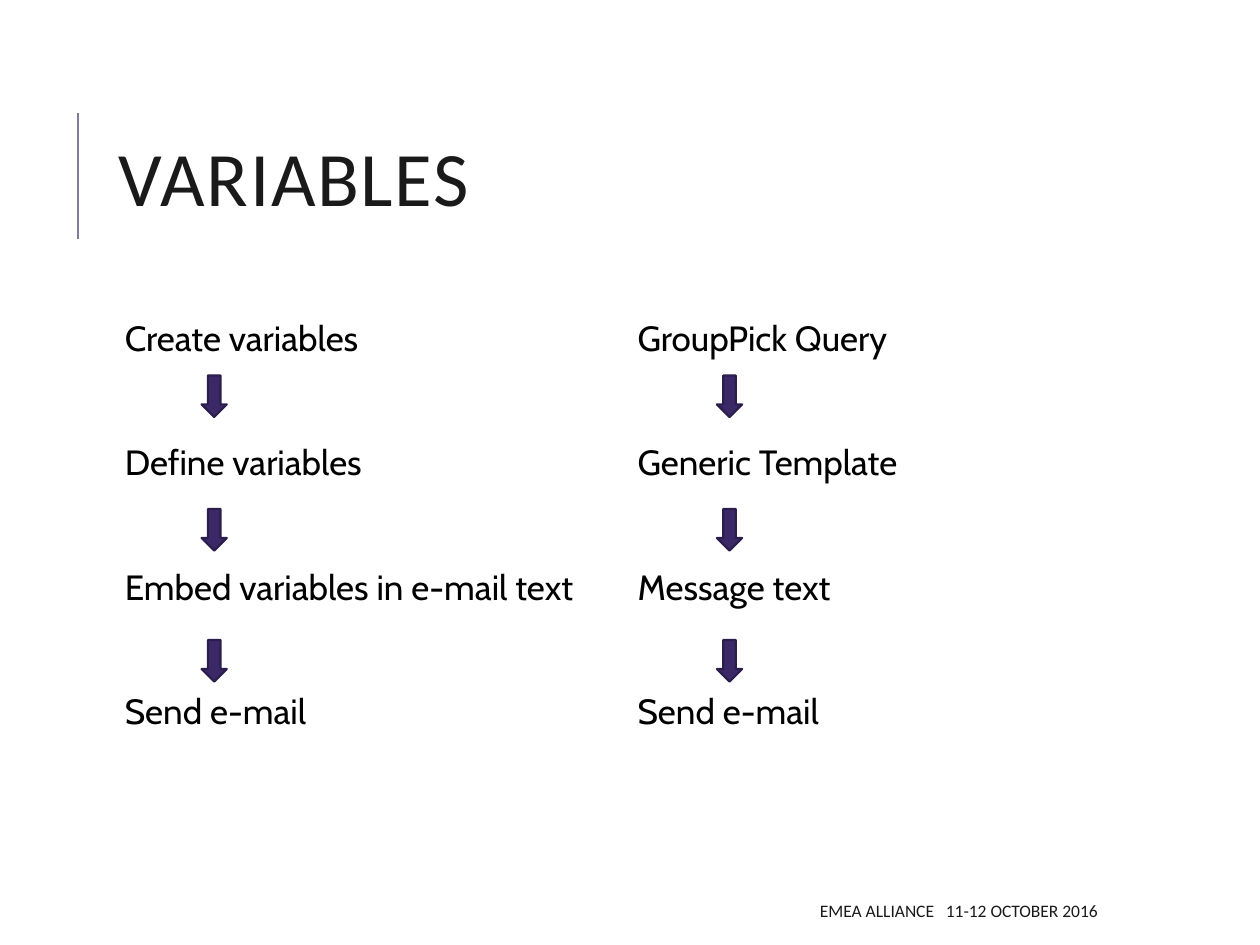
"""Build the slide that sets two step-by-step flows side by side."""
from dataclasses import dataclass

from lxml import etree
from pptx import Presentation
from pptx.dml.color import RGBColor
from pptx.enum import shapes, text
from pptx.oxml import ns
from pptx.util import Inches, Pt

INK, BLACK, RULE = "1A1A1A", "000000", "7F7B99"
ARROW_FILL, ARROW_LINE = "3B2867", "2C1E4C"
ARROW_TOPS = (2.98, 4.04, 5.08)


@dataclass
class Flow:
    left: float
    arrow_left: float
    steps: tuple[str, ...]


FLOWS = (
    Flow(0.84, 1.6, ("Create variables", "Define variables",
                     "Embed variables in e-mail text", "Send e-mail")),
    Flow(4.91, 5.69, ("GroupPick Query", "Generic Template",
                      "Message text", "Send e-mail")),
)


def colour(value: str) -> RGBColor:
    return RGBColor.from_string(value)


def place(box, left: float, top: float, width: float, height: float) -> None:
    box.left, box.top = Inches(left), Inches(top)
    box.width, box.height = Inches(width), Inches(height)


def write(para, words: str, *, size: float, font: str, ink: str,
          align=text.PP_ALIGN.LEFT, tracking: int = 0) -> None:
    para.alignment = align
    span = para.add_run()
    span.text = words
    span.font.size, span.font.name = Pt(size), font
    span.font.color.rgb = colour(ink)
    if tracking:
        span.font._element.set("spc", str(tracking))


def prepare(box, anchor, inset: float | None = None):
    frame = box.text_frame
    frame.word_wrap = True
    frame.auto_size = text.MSO_AUTO_SIZE.NONE
    frame.vertical_anchor = anchor
    if inset is not None:
        frame.margin_left = frame.margin_right = Inches(inset)
        frame.margin_top = frame.margin_bottom = Inches(inset)
    return frame


def draw_title(box) -> None:
    place(box, 0.84, 0.64, 7.97, 1.64)
    para = prepare(box, text.MSO_ANCHOR.MIDDLE).paragraphs[0]
    para.line_spacing = 0.8
    write(para, "VARIABLES", size=44, font="Calibri", ink=INK, tracking=100)


def draw_rule(page) -> None:
    rule = page.shapes.add_connector(
        shapes.MSO_CONNECTOR.STRAIGHT,
        Inches(0.62), Inches(1.9), Inches(0.62), Inches(0.9))
    rule.line.color.rgb = colour(RULE)
    rule.line.width = Pt(1.5)
    etree.SubElement(rule._element.spPr, ns.qn("a:effectLst"))


def draw_steps(box, flow: Flow) -> None:
    place(box, flow.left, 2.5, 3.9, 4.4)
    frame = prepare(box, text.MSO_ANCHOR.TOP, inset=0.05)
    for index, step in enumerate(flow.steps):
        para = frame.add_paragraph() if index else frame.paragraphs[0]
        para.line_spacing = 0.9
        para.space_before, para.space_after = Pt(12), Pt(37.5)
        write(para, step, size=20, font="Cabin", ink=BLACK)
        layout = para._p.get_or_add_pPr()
        layout.set("marL", str(Inches(0.1)))
        layout.set("indent", "0")
        etree.SubElement(layout, ns.qn("a:buNone"))


def draw_arrow(page, left: float, top: float) -> None:
    arrow = page.shapes.add_shape(
        shapes.MSO_SHAPE.DOWN_ARROW,
        Inches(left), Inches(top), Inches(0.2), Inches(0.33))
    arrow.shadow.inherit = False
    arrow.fill.solid()
    arrow.fill.fore_color.rgb = colour(ARROW_FILL)
    arrow.line.color.rgb = colour(ARROW_LINE)
    arrow.line.width = Pt(1.25)


def draw_footer(page) -> None:
    box = page.shapes.add_textbox(
        Inches(3.97), Inches(7.08), Inches(4.84), Inches(0.3))
    para = prepare(box, text.MSO_ANCHOR.MIDDLE).paragraphs[0]
    write(para, "EMEA ALLIANCE   11-12 OCTOBER 2016", size=10,
          font="Calibri", ink=INK, align=text.PP_ALIGN.RIGHT)


def main() -> None:
    deck = Presentation()
    deck.slide_width, deck.slide_height = Inches(10), Inches(7.5)
    page = deck.slides.add_slide(deck.slide_layouts.get_by_name("Two Content"))
    draw_rule(page)
    draw_title(page.shapes.title)
    for index, flow in enumerate(FLOWS, start=1):
        draw_steps(page.placeholders[index], flow)
        for top in ARROW_TOPS:
            draw_arrow(page, flow.arrow_left, top)
    draw_footer(page)
    deck.save("out.pptx")


if __name__ == "__main__":
    main()
